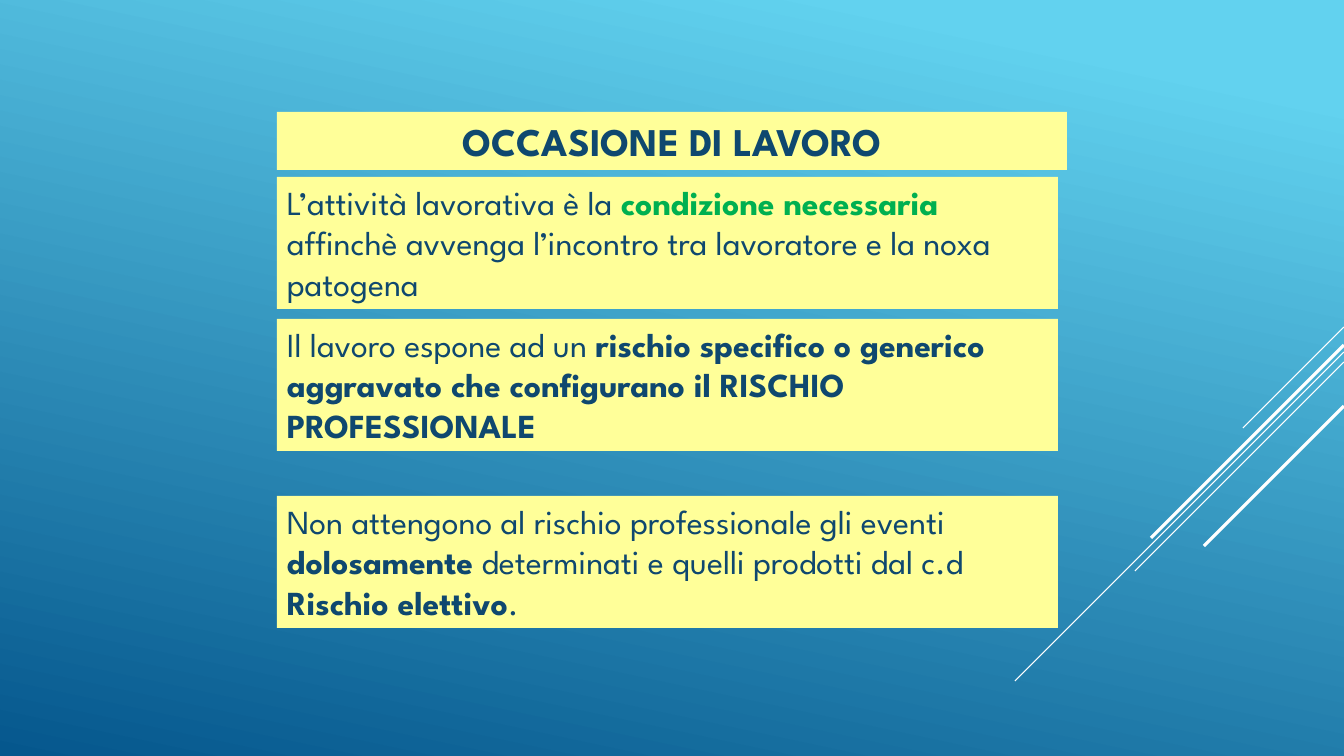
from pptx import Presentation
from pptx.dml.color import RGBColor
from pptx.enum.shapes import MSO_CONNECTOR, MSO_SHAPE
from pptx.enum.text import MSO_ANCHOR, MSO_AUTO_SIZE, PP_ALIGN
from pptx.oxml.ns import qn
from pptx.util import Pt
from lxml.etree import SubElement
from copy import deepcopy

PX = 12192000 / 1344
WIDTH, HEIGHT = 1344, 756
FONT = "League Spartan"
COLORS = {
    "sky": "62D2EF",
    "deep": "05578D",
    "panel": "FFFF99",
    "ink": "0F486F",
    "green": "00B050",
    "ray": "FFFFFF",
}

TITLE = [("OCCASIONE DI LAVORO", "ink", True)]
STATEMENTS = [
    (177, [
        ("L’attività lavorativa è la ", "ink", False),
        ("condizione necessaria ", "green", True),
        ("affinchè avvenga l’incontro tra lavoratore e la noxa patogena", "ink", False),
    ]),
    (319, [
        ("Il lavoro espone ad un ", "ink", False),
        ("rischio specifico o generico aggravato che configurano il RISCHIO PROFESSIONALE",
         "ink", True),
    ]),
    (496, [
        ("Non attengono al rischio professionale gli eventi ", "ink", False),
        ("dolosamente", "ink", True),
        (" determinati e quelli prodotti dal c.d ", "ink", False),
        ("Rischio elettivo", "ink", True),
        (".", "ink", False),
    ]),
]
PANEL_LEFT = 277
TITLE_TOP, TITLE_WIDTH, TITLE_HEIGHT = 112, 790, 58
STATEMENT_WIDTH, STATEMENT_HEIGHT = 781, 132

RAYS = [
    (327, 101, 0.75),
    (352, 329, 0.75),
    (362, 209, 0.75),
    (345, 193, 2.25),
    (406, 140, 2.25),
]


def emu(*lengths):
    return [round(length * PX) for length in lengths]


def color(name):
    return RGBColor.from_string(COLORS[name])


def add_panel(slide, runs, top, width, height, size=24, align=PP_ALIGN.LEFT):
    panel = slide.shapes.add_shape(
        MSO_SHAPE.RECTANGLE, *emu(PANEL_LEFT, top, width, height))
    panel.shadow.inherit = False
    panel.fill.solid()
    panel.fill.fore_color.rgb = color("panel")
    panel.line.fill.background()
    frame = panel.text_frame
    frame.word_wrap = True
    frame.auto_size = MSO_AUTO_SIZE.SHAPE_TO_FIT_TEXT
    frame.vertical_anchor = MSO_ANCHOR.TOP
    paragraph = frame.paragraphs[0]
    paragraph.alignment = align
    for text, ink, bold in runs:
        run = paragraph.add_run()
        run.text = text
        run.font.name = FONT
        run.font.size = Pt(size)
        run.font.bold = bold
        run.font.color.rgb = color(ink)


def add_ray(slide, top, reach, weight):
    ray = slide.shapes.add_connector(
        MSO_CONNECTOR.STRAIGHT, *emu(WIDTH, top, WIDTH - reach, top + reach))
    ray.line.color.rgb = color("ray")
    ray.line.width = Pt(weight)
    SubElement(ray._element.spPr, qn("a:effectLst"))


def paint_background(slide):
    fill = slide.background.fill
    fill.gradient()
    fill.gradient_angle = 360 - 102
    for stop, name in zip(fill.gradient_stops, ("sky", "deep")):
        stop.color.rgb = color(name)
    first = slide.element.xpath(".//p:bg//a:gs")[0]
    second = deepcopy(first)
    second.set("pos", "10000")
    first.addnext(second)


def main():
    deck = Presentation()
    deck.slide_width, deck.slide_height = emu(WIDTH, HEIGHT)
    slide = deck.slides.add_slide(deck.slide_layouts[6])
    paint_background(slide)
    for ray in RAYS:
        add_ray(slide, *ray)
    add_panel(slide, TITLE, TITLE_TOP, TITLE_WIDTH, TITLE_HEIGHT,
              size=28, align=PP_ALIGN.CENTER)
    for top, runs in STATEMENTS:
        add_panel(slide, runs, top, STATEMENT_WIDTH, STATEMENT_HEIGHT)
    deck.save("out.pptx")


if __name__ == "__main__":
    main()
